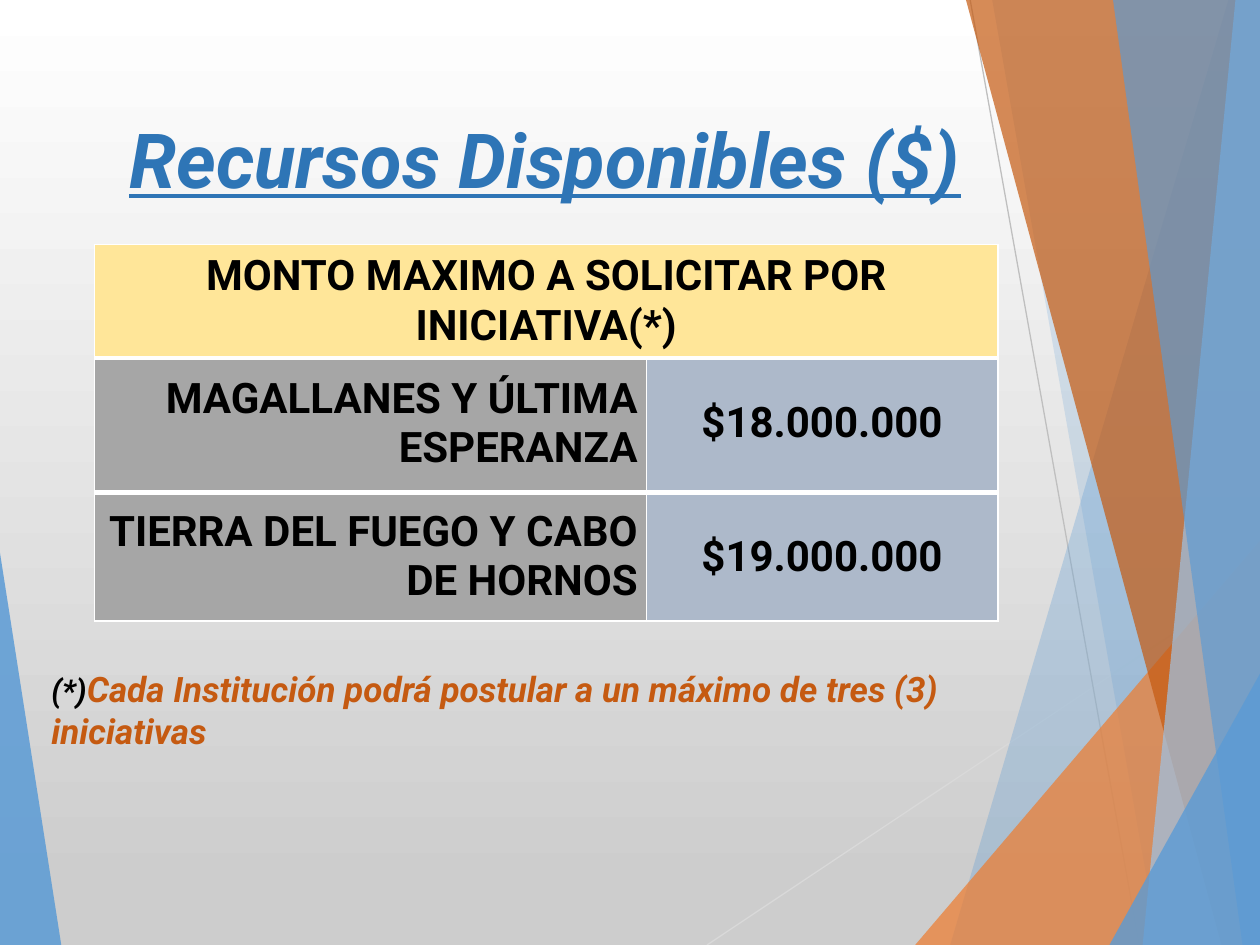
from dataclasses import dataclass

from lxml import etree
from pptx import Presentation
from pptx.dml.color import RGBColor
from pptx.enum.shapes import MSO_CONNECTOR
from pptx.enum.text import MSO_ANCHOR, MSO_AUTO_SIZE, PP_ALIGN
from pptx.oxml.ns import qn
from pptx.util import Pt

STRAIGHT = MSO_CONNECTOR.STRAIGHT
TOP, MIDDLE = MSO_ANCHOR.TOP, MSO_ANCHOR.MIDDLE
LEFT, CENTER, RIGHT = PP_ALIGN.LEFT, PP_ALIGN.CENTER, PP_ALIGN.RIGHT
FIT_SHAPE = MSO_AUTO_SIZE.SHAPE_TO_FIT_TEXT
WIDTH, HEIGHT = 720, 540


@dataclass(frozen=True)
class Theme:
    font: str = "Roboto"
    title_size: float = 43.4
    table_size: float = 24
    note_size: float = 20
    mark_size: float = 18
    white: str = "FFFFFF"
    black: str = "000000"
    backdrop: str = "CDCDCD"
    blue: str = "5B9BD5"
    light_blue: str = "9DC3E6"
    title_blue: str = "2E75B6"
    orange: str = "ED7D31"
    dark_orange: str = "C55A11"
    light_line: str = "D9D9D9"
    line: str = "BFBFBF"
    header: str = "FFE699"
    region: str = "A6A6A6"
    amount: str = "ADB9CA"


THEME = Theme()


def color(value):
    return RGBColor.from_string(value)


def set_font(font, size, value, italic=False):
    font.name = THEME.font
    font.size = Pt(size)
    font.bold = True
    font.italic = italic
    font.color.rgb = color(value)


def paint_background(slide):
    fill = slide.background.fill
    fill.gradient()
    fill.gradient_angle = 270
    for stop, position, value in zip(fill.gradient_stops, (0, 0.94),
                                     (THEME.white, THEME.backdrop)):
        stop.position = position
        stop.color.rgb = color(value)


def add_facet(slide, points, value, opacity):
    """Draw a translucent polygon; opacity is a percentage."""
    builder = slide.shapes.build_freeform(*points[0], scale=Pt(1))
    builder.add_line_segments(points[1:], close=True)
    shape = builder.convert_to_shape()
    shape.shadow.inherit = False
    shape.line.fill.background()
    shape.fill.solid()
    shape.fill.fore_color.rgb = color(value)
    fill_color = shape.fill._xPr.find(".//" + qn("a:srgbClr"))
    etree.SubElement(fill_color, qn("a:alpha"), val=str(opacity * 1000))


def add_hairline(slide, start, end, value):
    connector = slide.shapes.add_connector(STRAIGHT, *map(Pt, start + end))
    connector.line.width = Pt(0.75)
    connector.line.color.rgb = color(value)
    etree.SubElement(connector._element.spPr, qn("a:effectLst"))


def add_facets(slide):
    def right_band(top, bottom):
        return [(top, 0), (bottom, HEIGHT), (WIDTH, HEIGHT), (WIDTH, 0)]

    def right_corner(left, top):
        return [(left, HEIGHT), (WIDTH, top), (WIDTH, HEIGHT)]

    add_facet(slide, [(0, 316), (35.3, HEIGHT), (0, HEIGHT)], THEME.blue, 85)
    add_hairline(slide, (404, HEIGHT), (WIDTH, 329), THEME.light_line)
    add_hairline(slide, (554.4, 0), (651, HEIGHT), THEME.line)
    for points, value, opacity in (
        (right_band(702, 543), THEME.blue, 30),
        (right_band(567, 662), THEME.blue, 20),
        (right_corner(523, 309), THEME.orange, 72),
        (right_band(552, 698), THEME.dark_orange, 70),
        (right_band(706, 653), THEME.light_blue, 70),
        (right_band(636, 710), THEME.blue, 65),
        (right_corner(634, 385), THEME.blue, 80),
    ):
        add_facet(slide, points, value, opacity)


def add_text(slide, box, runs, alignment=LEFT):
    """Add one paragraph made of (text, size, color) runs."""
    frame = slide.shapes.add_textbox(*map(Pt, box)).text_frame
    frame.word_wrap = True
    frame.vertical_anchor = TOP
    paragraph = frame.paragraphs[0]
    paragraph.alignment = alignment
    for text, size, value in runs:
        run = paragraph.add_run()
        run.text = text
        set_font(run.font, size, value, italic=True)
    return frame


def set_borders(cell, widths):
    """Put white borders on the given sides, keyed L, R, T and B in that order."""
    properties = cell._tc.get_or_add_tcPr()
    for index, (side, width) in enumerate(widths.items()):
        border = etree.Element(qn("a:ln" + side), w=str(Pt(width)))
        fill = etree.SubElement(border, qn("a:solidFill"))
        etree.SubElement(fill, qn("a:srgbClr"), val=THEME.white)
        properties.insert(index, border)


def fill_cell(cell, text, value, alignment, borders):
    cell.text = text
    cell.vertical_anchor = MIDDLE
    cell.fill.solid()
    cell.fill.fore_color.rgb = color(value)
    paragraph = cell.text_frame.paragraphs[0]
    paragraph.alignment = alignment
    set_font(paragraph.font, THEME.table_size, THEME.black)
    if alignment == RIGHT:
        cell.margin_left = cell.margin_right = Pt(5)
        cell.margin_top = cell.margin_bottom = 0
    set_borders(cell, borders)


def add_plain_table(slide, left, top, widths, heights):
    table = slide.shapes.add_table(
        len(heights), len(widths), Pt(left), Pt(top),
        Pt(sum(widths)), Pt(sum(heights))).table
    table.first_row = table.horz_banding = False
    for column, width in zip(table.columns, widths):
        column.width = Pt(width)
    for row, height in zip(table.rows, heights):
        row.height = Pt(height)
    return table


def add_amounts(slide):
    amounts = (("MAGALLANES Y ÚLTIMA ESPERANZA", "$18.000.000"),
               ("TIERRA DEL FUEGO Y CABO DE HORNOS", "$19.000.000"))
    table = add_plain_table(slide, 54, 202.3, (315.4, 200.8), (79.2, 73.4))
    for row, (region, amount), bottom in zip(table.rows, amounts, (3, 1)):
        borders = {"L": 1, "R": 1, "B": bottom}
        fill_cell(row.cells[0], region, THEME.region, RIGHT, borders)
        fill_cell(row.cells[1], amount, THEME.amount, CENTER, borders)

    header = add_plain_table(slide, 54, 139.7, (516.2,), (64.8,))
    fill_cell(header.cell(0, 0), "MONTO MAXIMO A SOLICITAR POR INICIATIVA(*)",
              THEME.header, CENTER, {"L": 1, "R": 1, "T": 1, "B": 3})


def main():
    presentation = Presentation()
    presentation.slide_width, presentation.slide_height = Pt(WIDTH), Pt(HEIGHT)
    slide = presentation.slides.add_slide(presentation.slide_layouts[6])
    paint_background(slide)
    add_facets(slide)

    title = add_text(
        slide, (22.3, 49, 578.2, 62.6),
        [("Recursos Disponibles ($)", THEME.title_size, THEME.title_blue)], CENTER)
    title.margin_top, title.margin_bottom = Pt(15.4), 0
    title.paragraphs[0].runs[0].font.underline = True

    add_amounts(slide)
    note = add_text(slide, (22.3, 378, 607, 55.4), [
        ("(*)", THEME.mark_size, THEME.black),
        ("Cada Institución podrá postular a un máximo de tres (3) iniciativas",
         THEME.note_size, THEME.dark_orange)])
    note.auto_size = FIT_SHAPE
    presentation.save("out.pptx")


if __name__ == "__main__":
    main()
